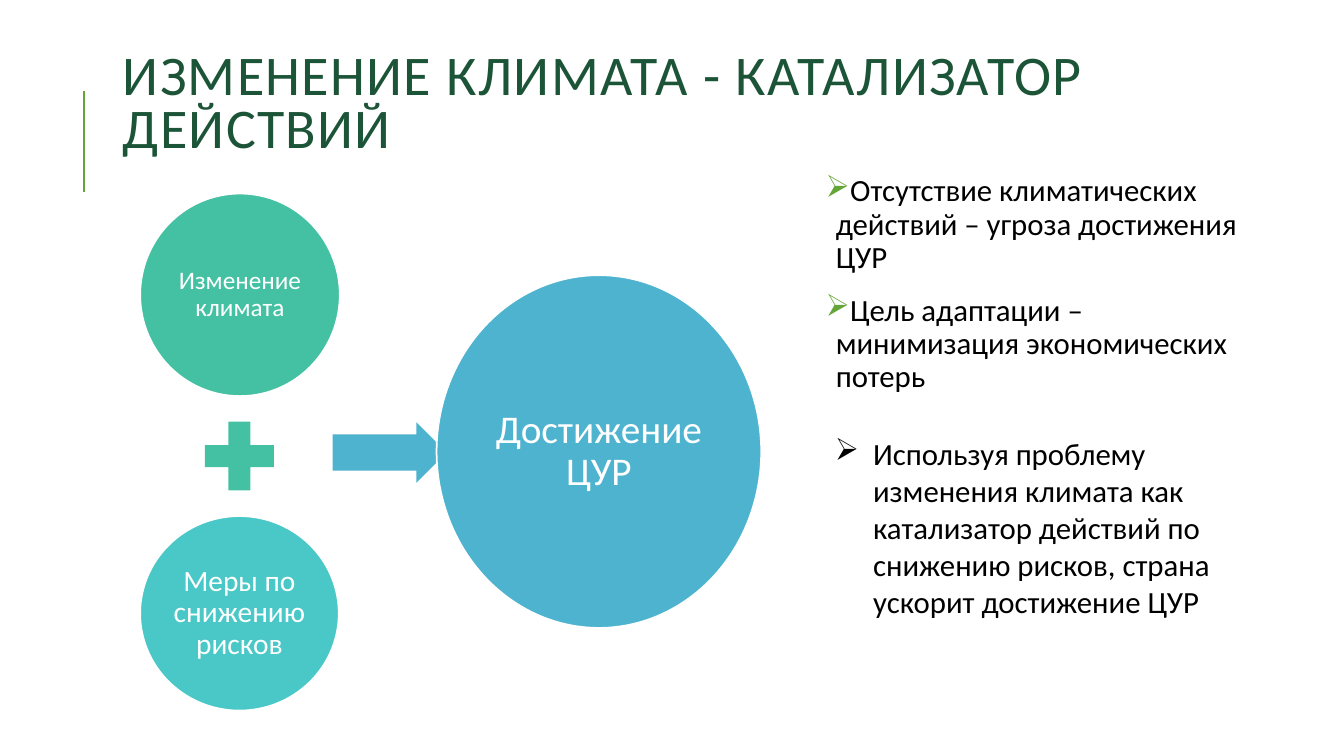
from lxml import etree
from pptx import Presentation
from pptx.dml.color import RGBColor
from pptx.enum.shapes import MSO_CONNECTOR, MSO_SHAPE
from pptx.enum.text import MSO_ANCHOR, PP_ALIGN
from pptx.oxml.ns import qn
from pptx.util import Inches, Pt

COLORS = {
    "title": "1C5438", "accent": "63A537", "climate": "44C1A3", "measures": "49C8C7",
    "goal": "4EB3CF", "white": "FFFFFF", "black": "000000",
}
FONT = "Calibri"
BULLET_PARAS = [
    ("Отсутствие климатических действий – угроза достижения ЦУР", "accent", 0.1, -0.1, 0.9, 12),
    ("Цель адаптации – минимизация экономических потерь", "accent", 0.1, -0.1, 0.9, 12),
    ("Используя проблему изменения климата как катализатор действий по снижению рисков, "
     "страна ускорит достижение ЦУР", "black", 0.47, -0.38, 1.0, 27),
]


def color(name):
    """Return the named palette colour."""
    return RGBColor.from_string(COLORS[name])


def style_para(para, size, color_name, line_spacing):
    """Format a paragraph and its runs."""
    para.line_spacing = line_spacing
    for span in para.runs:
        span.font.name = FONT
        span.font.size = Pt(size)
        span.font.color.rgb = color(color_name)


def set_margins(frame, margin):
    """Wrap the text and give all four sides the same margin."""
    frame.word_wrap = True
    frame.margin_left = frame.margin_right = Inches(margin)
    frame.margin_top = frame.margin_bottom = Inches(margin)


def add_figure(page, kind, left, top, width, height, fill):
    """Add a flat preset shape without outline."""
    figure = page.shapes.add_shape(kind, Inches(left), Inches(top), Inches(width), Inches(height))
    figure.shadow.inherit = False
    figure.fill.solid()
    figure.fill.fore_color.rgb = color(fill)
    figure.line.fill.background()
    return figure


def add_circle(page, left, top, width, height, fill, text, size, margin):
    """Add a white-edged circle with a centred label."""
    circle = add_figure(page, MSO_SHAPE.OVAL, left, top, width, height, fill)
    circle.line.color.rgb = color("white")
    circle.line.width = Pt(1.25)
    frame = circle.text_frame
    frame.text = text
    frame.vertical_anchor = MSO_ANCHOR.MIDDLE
    set_margins(frame, margin)
    para = frame.paragraphs[0]
    para.alignment = PP_ALIGN.CENTER
    style_para(para, size, "white", 0.9)


def add_title(page, left, top, width, height):
    """Add the heading and the vertical rule to its left."""
    rule_x = Inches(left - 0.29)
    rule = page.shapes.add_connector(
        MSO_CONNECTOR.STRAIGHT, rule_x, Inches(top + 1.5), rule_x, Inches(top + 0.5))
    rule.line.color.rgb = color("accent")
    rule.line.width = Pt(1.5)
    etree.SubElement(rule._element.spPr, qn("a:effectLst"))
    box = page.shapes.add_textbox(Inches(left), Inches(top), Inches(width), Inches(height))
    frame = box.text_frame
    frame.word_wrap = True
    frame.vertical_anchor = MSO_ANCHOR.MIDDLE
    frame.text = "ИЗМЕНЕНИЕ КЛИМАТА - КАТАЛИЗАТОР ДЕЙСТВИЙ"
    para = frame.paragraphs[0]
    style_para(para, 40, "title", 0.8)
    para.runs[0].font._element.set("spc", "100")


def add_equation(page, left, top):
    """Add the two causes, the plus, the arrow and the resulting goal."""
    add_circle(page, left, top, 1.98, 2.01, "climate", "Изменение климата", 18, 0.03)
    add_figure(page, MSO_SHAPE.MATH_PLUS, left + 0.52, top + 2.14, 0.93, 0.93, "climate")
    add_circle(page, left, top + 3.2, 1.97, 1.93, "measures", "Меры по снижению рисков", 21, 0.03)
    arrow = add_figure(page, MSO_SHAPE.RIGHT_ARROW, left + 1.91, top + 2.27, 1.13, 0.6, "goal")
    arrow.adjustments[0] = 0.6
    add_circle(page, left + 2.94, top + 0.81, 3.22, 3.5, "goal", "Достижение ЦУР", 28, 0.04)


def add_bullet(para, color_name, margin, indent):
    """Give a paragraph a coloured arrow bullet and a hanging indent."""
    properties = para._p.get_or_add_pPr()
    properties.set("marL", str(Inches(margin)))
    properties.set("indent", str(Inches(indent)))
    bullet_color = etree.SubElement(properties, qn("a:buClr"))
    etree.SubElement(bullet_color, qn("a:srgbClr"), val=COLORS[color_name])
    etree.SubElement(properties, qn("a:buChar"), char="➢")


def add_conclusions(page, left, top, width, height):
    """Add the bulleted conclusions."""
    box = page.shapes.add_textbox(Inches(left), Inches(top), Inches(width), Inches(height))
    frame = box.text_frame
    set_margins(frame, 0.05)
    frame.text = "\n".join(text for text, *_ in BULLET_PARAS)
    for para, (_, bullet, margin, indent, spacing, before) in zip(frame.paragraphs, BULLET_PARAS):
        style_para(para, 22, "black", spacing)
        para.space_before = Pt(before)
        para.space_after = Pt(2)
        add_bullet(para, bullet, margin, indent)


def main():
    """Build the slide and save the deck."""
    deck = Presentation()
    deck.slide_width = Inches(13.33)
    deck.slide_height = Inches(7.5)
    page = deck.slides.add_slide(deck.slide_layouts[6])
    add_title(page, 1.12, 0.4, 10.63, 1.3)
    add_equation(page, 1.39, 1.92)
    add_conclusions(page, 8.14, 1.69, 4.2, 5.21)
    deck.save("out.pptx")


if __name__ == "__main__":
    main()
